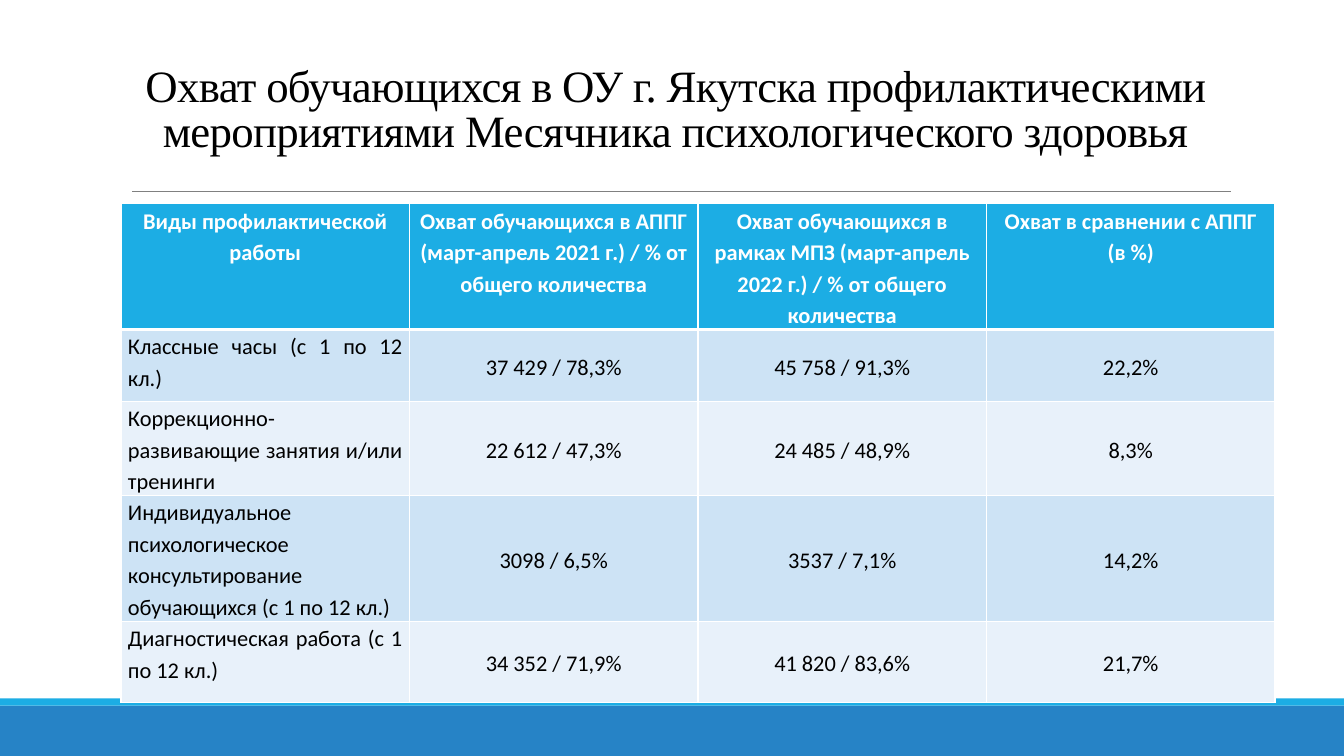
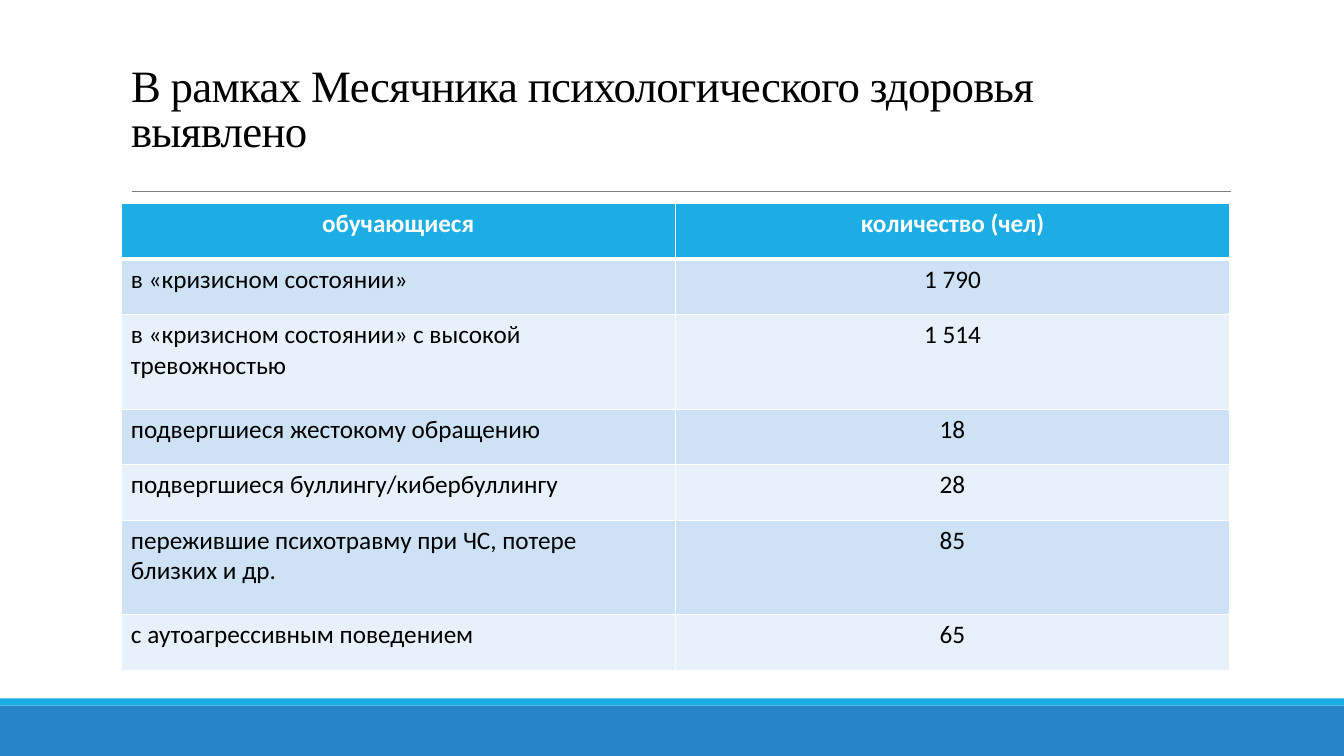
from lxml import etree
from pptx import Presentation
from pptx.dml.color import RGBColor
from pptx.enum.shapes import MSO_CONNECTOR, MSO_SHAPE
from pptx.enum.text import MSO_ANCHOR, MSO_AUTO_SIZE, PP_ALIGN
from pptx.oxml.ns import qn
from pptx.util import Inches, Pt

LEFT, CENTER, JUSTIFY = PP_ALIGN.LEFT, PP_ALIGN.CENTER, PP_ALIGN.JUSTIFY
TOP, MIDDLE = MSO_ANCHOR.TOP, MSO_ANCHOR.MIDDLE
NO_FIT = MSO_AUTO_SIZE.NONE
RECT, STRAIGHT = MSO_SHAPE.RECTANGLE, MSO_CONNECTOR.STRAIGHT

BLACK = RGBColor(0x00, 0x00, 0x00)
WHITE = RGBColor(0xFF, 0xFF, 0xFF)
GRAY = RGBColor(0x80, 0x80, 0x80)
BLUE = RGBColor(0x26, 0x83, 0xC6)
CYAN = RGBColor(0x1C, 0xAD, 0xE4)
BAND_FILLS = (RGBColor(0xE8, 0xF1, 0xFA), RGBColor(0xCD, 0xE3, 0xF5))

GRID_COLS, GRID_ROWS = 80, 45
MARGIN, CONTENT_W = 7.2, 66
TABLE_TOP = 12.12

TITLE_FONT = {"name": "Times New Roman", "size": Pt(32), "bold": False}
BODY_FONT = {"name": "Calibri", "bold": False}
HEAD_FONT = {"name": "Calibri", "bold": True}


def apply(obj, values):
    for name, value in values.items():
        setattr(obj, name, value)


class Deck:
    """Holds the presentation, its shared style and the current slide."""

    def __init__(self):
        self.prs = Presentation()
        apply(self.prs, {"slide_width": Inches(13.33), "slide_height": Inches(7.5)})
        self.s = None

    def x(self, cols):
        return round(self.prs.slide_width * cols / GRID_COLS)

    def y(self, rows):
        return round(self.prs.slide_height * rows / GRID_ROWS)

    def slide(self, title, align=LEFT):
        self.s = self.prs.slides.add_slide(self.prs.slide_layouts[5])
        self.band(42, 3, BLUE)
        self.band(41.58, 0.42, CYAN)
        self.rule(7.86, 73.26, 11.4)
        self.title(title, align)

    def band(self, top, height, color):
        sp = self.s.shapes.add_shape(RECT, 0, self.y(top), self.x(GRID_COLS), self.y(height))
        sp.shadow.inherit = False
        sp.fill.solid()
        sp.fill.fore_color.rgb = color
        sp.line.fill.background()

    def rule(self, left, right, top):
        line = self.s.shapes.add_connector(STRAIGHT, self.x(left), self.y(top), self.x(right), self.y(top))
        line.line.color.rgb = GRAY
        line.line.width = Pt(0.5)
        etree.SubElement(line._element.spPr, qn("a:effectLst"))

    def title(self, text, align):
        sp = self.s.shapes.title
        apply(sp, {"left": self.x(MARGIN), "top": self.y(1.86),
                   "width": self.x(CONTENT_W), "height": self.y(9.54)})
        tf = sp.text_frame
        apply(tf, {"word_wrap": True, "auto_size": NO_FIT, "vertical_anchor": MIDDLE})
        r = self.text(tf, text, TITLE_FONT, BLACK, {"alignment": align, "line_spacing": 0.85})
        r._r.get_or_add_rPr().set("spc", "-50")

    def text(self, tf, text, font, color, para):
        p = tf.paragraphs[0]
        apply(p, para)
        r = p.add_run()
        r.text = text
        apply(r.font, font)
        r.font.color.rgb = color
        return r

    def borders(self, cell, bottom):
        tcPr = cell._tc.get_or_add_tcPr()
        for side, width in (("L", 1), ("R", 1), ("T", 1), ("B", bottom)):
            ln = etree.SubElement(tcPr, qn(f"a:ln{side}"), w=str(Pt(width)))
            fill = etree.SubElement(ln, qn("a:solidFill"))
            etree.SubElement(fill, qn("a:srgbClr"), val=str(WHITE))

    def table(self, data, width, heights, size, label_align=LEFT, anchor=TOP, spacing=1.0, inset=(0.6, 0.3)):
        n_cols = len(data[0])
        frame = self.s.shapes.add_table(len(data), n_cols, self.x(MARGIN), self.y(TABLE_TOP),
                                        self.x(width), self.y(sum(heights)))
        table = frame.table
        for col in table.columns:
            col.width = self.x(width / n_cols)
        dx, dy = self.x(inset[0]), self.y(inset[1])
        for i, (row, height) in enumerate(zip(data, heights)):
            table.rows[i].height = self.y(height)
            head = i == 0
            for j, text in enumerate(row):
                cell = table.cell(i, j)
                apply(cell, {"margin_left": dx, "margin_right": dx, "margin_top": dy, "margin_bottom": dy,
                             "vertical_anchor": TOP if head or j == 0 else anchor})
                self.borders(cell, 3 if head else 1)
                cell.fill.solid()
                cell.fill.fore_color.rgb = CYAN if head else BAND_FILLS[i % 2]
                font = {**(HEAD_FONT if head else BODY_FONT), "size": Pt(size)}
                align = label_align if j == 0 and not head else CENTER
                self.text(cell.text_frame, text, font, WHITE if head else BLACK,
                          {"alignment": align, "line_spacing": spacing})


COVERAGE = [
    ("Виды профилактической работы",
     "Охват обучающихся в АППГ (март-апрель 2021 г.) / % от общего количества",
     "Охват обучающихся в рамках МПЗ (март-апрель 2022 г.) / % от общего количества",
     "Охват в сравнении с АППГ (в %)"),
    ("Классные часы (с 1 по 12 кл.)", "37 429 / 78,3%", "45 758 / 91,3%", "22,2%"),
    ("Коррекционно-развивающие занятия и/или тренинги", "22 612 / 47,3%", "24 485 / 48,9%", "8,3%"),
    ("Индивидуальное психологическое консультирование обучающихся (с 1 по 12 кл.)",
     "3098 / 6,5%", "3537 / 7,1%", "14,2%"),
    ("Диагностическая работа (с 1 по 12 кл.)", "34 352 / 71,9%", "41 820 / 83,6%", "21,7%"),
]

FINDINGS = [
    ("обучающиеся", "количество (чел)"),
    ("в «кризисном состоянии»", "1 790"),
    ("в «кризисном состоянии» с высокой тревожностью", "1 514"),
    ("подвергшиеся жестокому обращению", "18"),
    ("подвергшиеся буллингу/кибербуллингу", "28"),
    ("пережившие психотравму при ЧС, потере близких и др.", "85"),
    ("с аутоагрессивным поведением", "65"),
]


def main():
    deck = Deck()
    deck.slide("Охват обучающихся в ОУ г. Якутска профилактическими "
               "мероприятиями Месячника психологического здоровья", CENTER)
    deck.table(COVERAGE, 68.7, (7.2, 4.26, 4.8, 7.2, 4.8), 16,
               label_align=JUSTIFY, anchor=MIDDLE, spacing=1.15, inset=(0.42, 0))
    deck.slide("В рамках Месячника психологического здоровья выявлено")
    single, double = 3.3, 5.64
    deck.table(FINDINGS, CONTENT_W, (single, single, double, single, single, double, single), 18)
    deck.prs.save("out.pptx")


if __name__ == "__main__":
    main()
